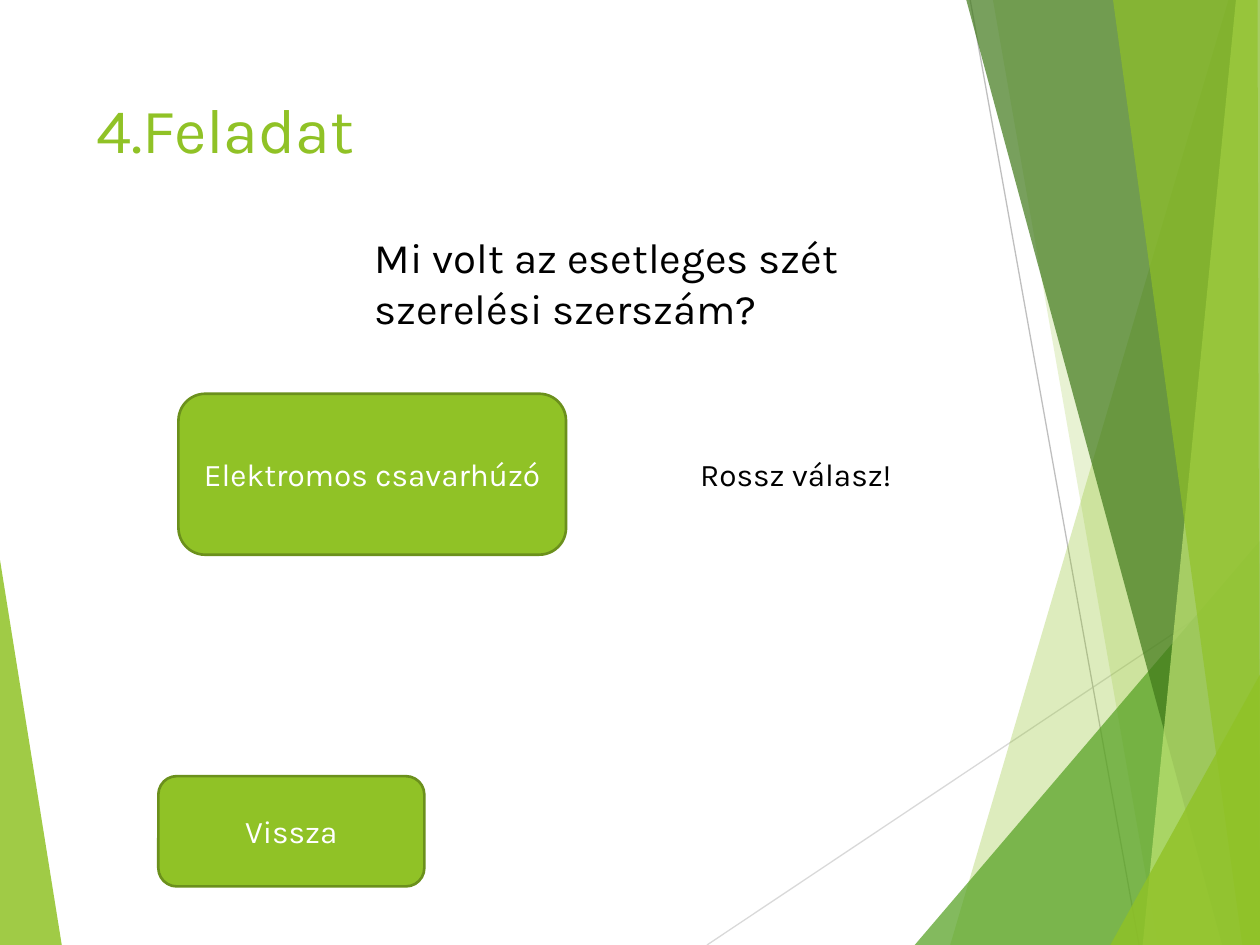
from dataclasses import dataclass

from lxml.etree import SubElement
from pptx import Presentation
from pptx.dml.color import RGBColor
from pptx.enum.shapes import MSO_CONNECTOR, MSO_SHAPE
from pptx.enum.text import MSO_ANCHOR, PP_ALIGN
from pptx.oxml.ns import qn
from pptx.util import Pt

W, H = 720, 540


@dataclass(frozen=True)
class Theme:
    font: str = "Karla"
    accent: str = "90C226"
    border: str = "6B901C"
    green: str = "54A021"
    dark: str = "3F7819"
    light: str = "C0E474"
    text: str = "000000"
    white: str = "FFFFFF"
    title_size: int = 36
    question_size: int = 24
    body_size: int = 18


class SlideBuilder:
    def __init__(self, slide, theme):
        self.s, self.theme = slide, theme

    def fill_text(self, shape, text, size, color, align=PP_ALIGN.LEFT,
                  anchor=MSO_ANCHOR.TOP):
        tf = shape.text_frame
        tf.word_wrap = True
        tf.vertical_anchor = anchor
        p = tf.paragraphs[0]
        p.alignment = align
        r = p.add_run()
        r.text = text
        for name, value in {"name": self.theme.font, "size": Pt(size)}.items():
            setattr(r.font, name, value)
        r.font.color.rgb = RGBColor.from_string(color)

    def text(self, box, text, size, color):
        tb = self.s.shapes.add_textbox(*map(Pt, box))
        self.fill_text(tb, text, size, color)

    def button(self, box, text):
        sp = self.s.shapes.add_shape(MSO_SHAPE.ROUNDED_RECTANGLE, *map(Pt, box))
        sp.shadow.inherit = False
        sp.fill.solid()
        sp.fill.fore_color.rgb = RGBColor.from_string(self.theme.accent)
        sp.line.color.rgb = RGBColor.from_string(self.theme.border)
        sp.line.width = Pt(1.5)
        self.fill_text(sp, text, self.theme.body_size, self.theme.white,
                       PP_ALIGN.CENTER, MSO_ANCHOR.MIDDLE)

    def line(self, start, end, color):
        cx = self.s.shapes.add_connector(MSO_CONNECTOR.STRAIGHT,
                                         *map(Pt, start + end))
        cx.line.color.rgb = RGBColor.from_string(color)
        cx.line.width = Pt(0.75)
        SubElement(cx._element.spPr, qn("a:effectLst"))

    def facet(self, points, color, opacity):
        first, *rest = [(Pt(x), Pt(y)) for x, y in points]
        builder = self.s.shapes.build_freeform(*first)
        builder.add_line_segments(rest, close=True)
        sp = builder.convert_to_shape()
        sp.shadow.inherit = False
        sp.fill.solid()
        sp.fill.fore_color.rgb = RGBColor.from_string(color)
        sp.line.fill.background()
        clr = sp._element.spPr.find(qn("a:solidFill"))[0]
        SubElement(clr, qn("a:alpha"), val=str(opacity * 1000))


def main():
    prs = Presentation()
    prs.slide_width, prs.slide_height = Pt(W), Pt(H)
    theme = Theme()
    b = SlideBuilder(prs.slides.add_slide(prs.slide_layouts[6]), theme)

    # Left facet and thin lines
    b.facet([(0, 320), (35.3, H), (0, H)], theme.accent, 85)
    b.line((404, H), (W, 329), "D9D9D9")
    b.line((554.4, 0), (650.9, H), "BFBFBF")

    # Right facets, back to front; all run to the right edge
    right_facets = [
        ([(702, 0), (543, H), (W, H), (W, 0)], theme.accent, 30),
        ([(567.4, 0), (661.7, H), (W, H), (W, 0)], theme.accent, 20),
        ([(522.7, H), (W, 309), (W, H)], theme.green, 72),
        ([(552.2, 0), (698.4, H), (W, H), (W, 0)], theme.dark, 70),
        ([(706.3, 0), (653, H), (W, H), (W, 0)], theme.light, 70),
        ([(636, 0), (709.9, H), (W, H), (718.6, 0)], theme.accent, 65),
        ([(634.5, H), (W, 385.5), (W, H)], theme.accent, 80),
    ]
    for points, color, opacity in right_facets:
        b.facet(points, color, opacity)

    # Title, question and feedback
    b.text((48, 48, 500, 104), "4.Feladat", theme.title_size, theme.accent)
    b.text((206.9, 129, 290, 65.5),
           "Mi volt az esetleges szét szerelési szerszám?",
           theme.question_size, theme.text)
    b.text((393, 256.5, 127.5, 29), "Rossz válasz!",
           theme.body_size, theme.text)

    # Answer and back buttons
    b.button((102, 225, 221.5, 92), "Elektromos csavarhúzó")
    b.button((90.5, 443.5, 152, 63), "Vissza")

    prs.save("out.pptx")


if __name__ == "__main__":
    main()
